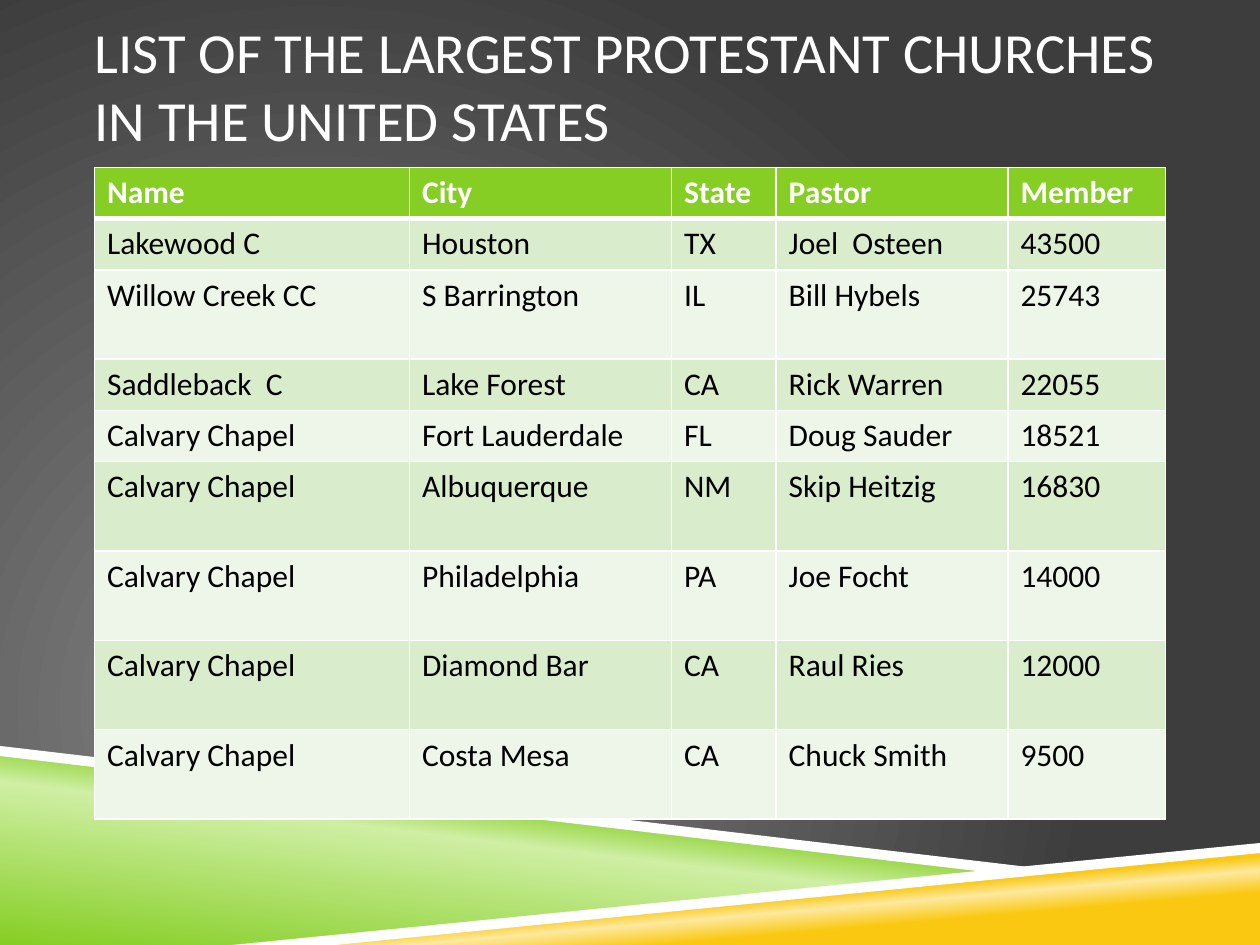
from dataclasses import dataclass

import lxml.etree
import pptx
import pptx.dml.color
import pptx.enum.text
import pptx.oxml.ns
import pptx.util

Inches = pptx.util.Inches
Pt = pptx.util.Pt
qn = pptx.oxml.ns.qn

FONT = "Calibri"
WHITE, BLACK = "FFFFFF", "000000"
GREEN, PALE_GREEN = "86CE24", "CFEFA4"
YELLOW, PALE_YELLOW = "FAC810", "FDE99F"
ROW_FILLS = ("D9EDCD", "EDF6E8")
COLUMN_WIDTHS = (2.5, 2.08, 0.83, 1.84, 1.25)
SHORT_ROW, TALL_ROW = 0.4, 0.71

Stops = tuple[tuple[int, str], ...]


@dataclass(frozen=True)
class Band:
    points: tuple[tuple[float, float], ...]
    stops: Stops
    angle: int = 0


@dataclass(frozen=True)
class Church:
    name: str
    city: str
    state: str
    pastor: str
    members: str
    height: float = SHORT_ROW

    def values(self) -> tuple[str, ...]:
        return self.name, self.city, self.state, self.pastor, self.members


BANDS = (
    Band(((0, 5.97), (7.92, 6.92), (2, 7.5), (0, 7.5)),
         ((0, GREEN), (52, PALE_GREEN), (66, GREEN)), 277),
    Band(((1.98, 7.5), (10, 6.72), (10, 7.5)),
         ((28, YELLOW), (40, PALE_YELLOW), (48, YELLOW)), 265),
    Band(((0, 5.92), (0, 6), (7.9, 6.93), (8.32, 6.9)), ((0, WHITE),)),
    Band(((10, 6.69), (1.84, 7.5), (2.66, 7.5), (10, 6.77)), ((0, WHITE),)),
)

HEADER = Church("Name", "City", "State", "Pastor", "Member")
CHURCHES = (
    Church("Lakewood C", "Houston", "TX", "Joel  Osteen", "43500"),
    Church("Willow Creek CC", "S Barrington", "IL", "Bill Hybels", "25743", TALL_ROW),
    Church("Saddleback  C", "Lake Forest", "CA", "Rick Warren", "22055"),
    Church("Calvary Chapel", "Fort Lauderdale", "FL", "Doug Sauder", "18521"),
    Church("Calvary Chapel", "Albuquerque", "NM", "Skip Heitzig", "16830", TALL_ROW),
    Church("Calvary Chapel", "Philadelphia", "PA", "Joe Focht", "14000", TALL_ROW),
    Church("Calvary Chapel", "Diamond Bar", "CA", "Raul Ries", "12000", TALL_ROW),
    Church("Calvary Chapel", "Costa Mesa", "CA", "Chuck Smith", "9500", TALL_ROW),
)


def rgb(color: str) -> pptx.dml.color.RGBColor:
    return pptx.dml.color.RGBColor.from_string(color)


def add_child(parent, tag: str, **attributes):
    return lxml.etree.SubElement(
        parent, qn(tag), {key: str(value) for key, value in attributes.items()})


def set_gradient_stops(element, stops: Stops):
    """Replace the stops and direction of the gradient in element, and return it."""
    gradient = element.find(".//" + qn("a:gradFill"))
    for child in list(gradient):
        gradient.remove(child)
    stop_list = add_child(gradient, "a:gsLst")
    for position, color in stops:
        stop = add_child(stop_list, "a:gs", pos=position * 1000)
        add_child(stop, "a:srgbClr", val=color)
    return gradient


def paint_background(slide) -> None:
    slide.background.fill.gradient()
    gradient = set_gradient_stops(slide.element, ((0, "878787"), (100, "3D3D3D")))
    circle = add_child(gradient, "a:path", path="circle")
    add_child(circle, "a:fillToRect", l=50000, t=100000, r=100000, b=50000)


def add_band(slide, band: Band) -> None:
    start, *others = [(Inches(x), Inches(y)) for x, y in band.points]
    builder = slide.shapes.build_freeform(*start)
    builder.add_line_segments(others, close=True)
    shape = builder.convert_to_shape()
    shape.shadow.inherit = False
    shape.line.fill.background()
    if len(band.stops) == 1:
        shape.fill.solid()
        shape.fill.fore_color.rgb = rgb(band.stops[0][1])
    else:
        shape.fill.gradient()
        gradient = set_gradient_stops(shape.element, band.stops)
        add_child(gradient, "a:lin", ang=band.angle * 60000, scaled=0)


def write_text(text_frame, text: str, *, size: float, color: str, bold: bool = False) -> None:
    paragraph = text_frame.paragraphs[0]
    paragraph.alignment = pptx.enum.text.PP_ALIGN.LEFT
    run = paragraph.add_run()
    run.text = text
    run.font.name = FONT
    run.font.size = Pt(size)
    run.font.bold = bold
    run.font.color.rgb = rgb(color)


def write_title(slide, text: str) -> None:
    title = slide.shapes.title
    title.left, title.top = Inches(0.75), Inches(0.32)
    title.width, title.height = Inches(8.5), Inches(0.7)
    frame = title.text_frame
    frame.word_wrap = True
    frame.auto_size = pptx.enum.text.MSO_AUTO_SIZE.NONE
    frame.vertical_anchor = pptx.enum.text.MSO_ANCHOR.MIDDLE
    frame.margin_left = frame.margin_right = 0
    write_text(frame, text, size=32.4, color=WHITE)


def set_borders(cell, *, top: float, bottom: float) -> None:
    properties = cell._tc.get_or_add_tcPr()
    widths = {"a:lnL": 1, "a:lnR": 1, "a:lnT": top, "a:lnB": bottom}
    for index, (tag, width) in enumerate(widths.items()):
        line = add_child(properties, tag, w=Pt(width))
        add_child(add_child(line, "a:solidFill"), "a:srgbClr", val=WHITE)
        properties.insert(index, line)


def add_church_table(slide) -> None:
    records = (HEADER, *CHURCHES)
    table = slide.shapes.add_table(
        len(records), len(COLUMN_WIDTHS), Inches(0.75), Inches(1.33),
        Inches(sum(COLUMN_WIDTHS)), Inches(sum(record.height for record in records))).table
    for column, width in zip(table.columns, COLUMN_WIDTHS):
        column.width = Inches(width)
    for row_index, record in enumerate(records):
        is_header = row_index == 0
        row = table.rows[row_index]
        row.height = Inches(record.height)
        for cell, value in zip(row.cells, record.values()):
            cell.fill.solid()
            cell.fill.fore_color.rgb = rgb(GREEN if is_header else ROW_FILLS[(row_index - 1) % 2])
            set_borders(cell, top=3 if row_index == 1 else 1, bottom=3 if is_header else 1)
            write_text(cell.text_frame, value, size=18,
                       color=WHITE if is_header else BLACK, bold=is_header)


def main() -> None:
    presentation = pptx.Presentation()
    presentation.slide_width, presentation.slide_height = Inches(10), Inches(7.5)
    slide = presentation.slides.add_slide(presentation.slide_layouts.get_by_name("Title Only"))
    paint_background(slide)
    for band in BANDS:
        add_band(slide, band)
    write_title(slide, "LIST OF THE LARGEST PROTESTANT CHURCHES IN THE UNITED STATES")
    add_church_table(slide)
    presentation.save("out.pptx")


if __name__ == "__main__":
    main()
